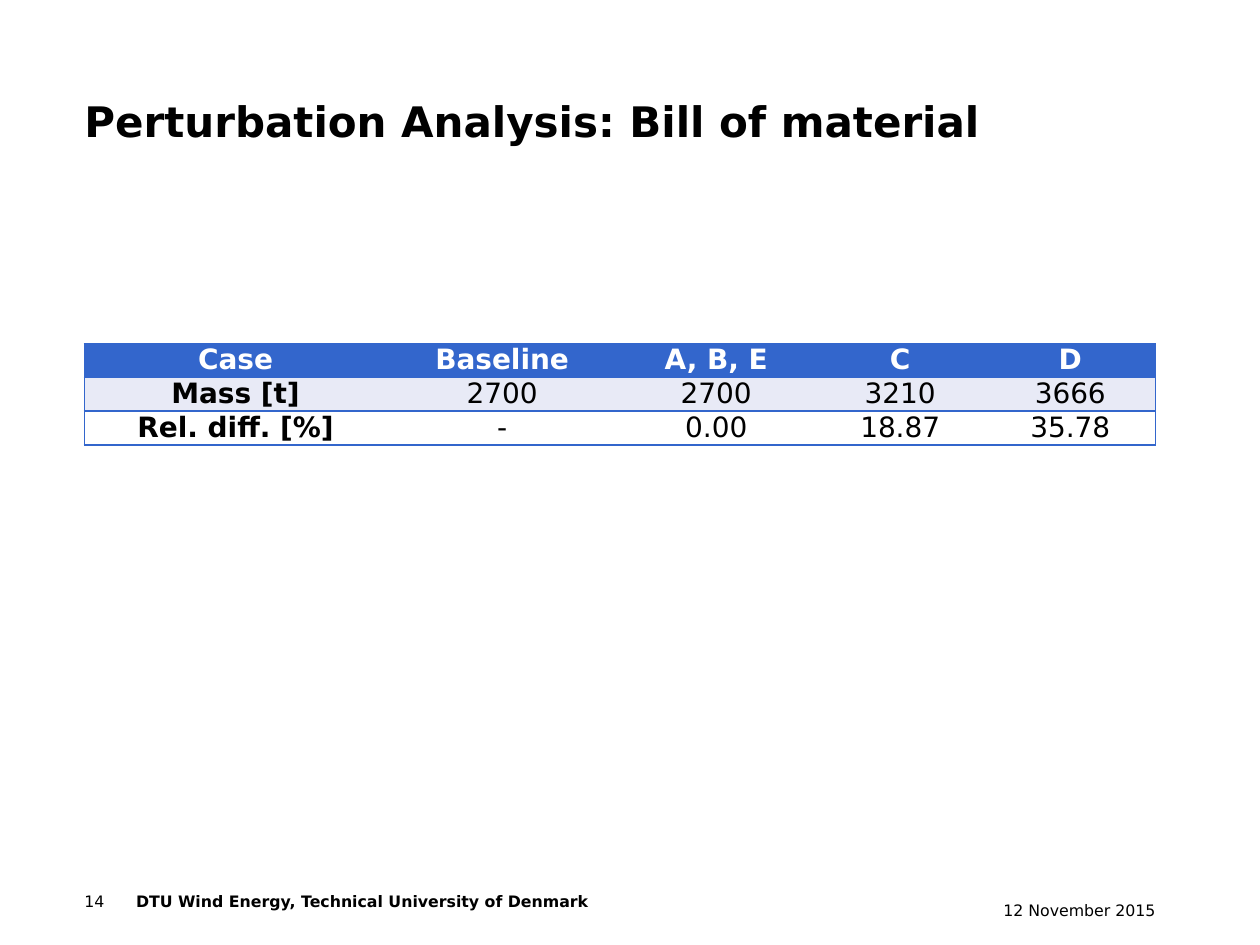
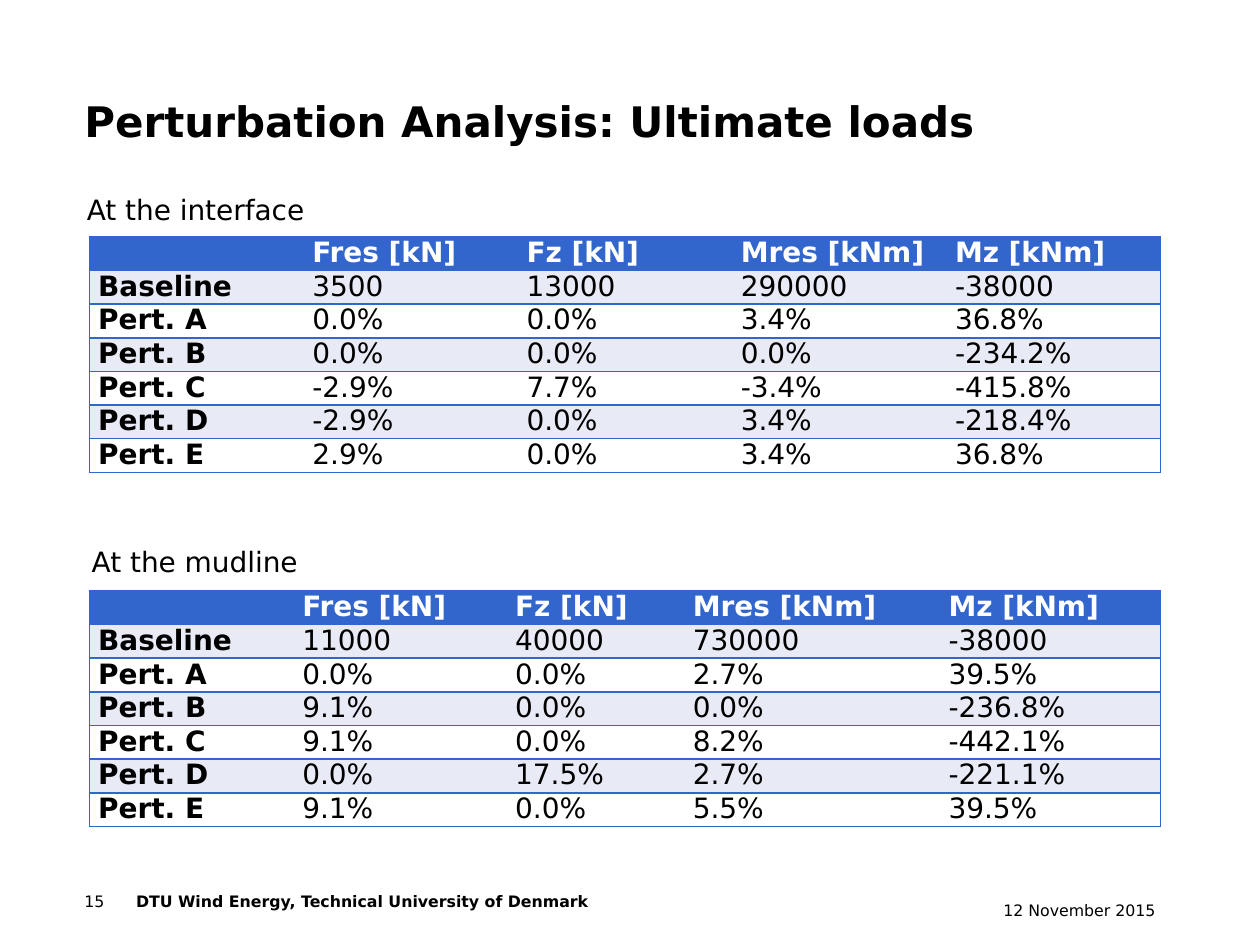
from lxml import etree
from pptx import Presentation
from pptx.dml.color import RGBColor
from pptx.enum.text import MSO_ANCHOR, PP_ALIGN
from pptx.oxml.ns import qn
from pptx.util import Inches, Pt

LEFT, CENTER, RIGHT = PP_ALIGN.LEFT, PP_ALIGN.CENTER, PP_ALIGN.RIGHT
TOP, MIDDLE = MSO_ANCHOR.TOP, MSO_ANCHOR.MIDDLE

FONT = "DejaVu Sans"
BLUE, PALE, WHITE, BLACK = "3366CC", "E8EAF6", "FFFFFF", "000000"
NO_STYLE = "{2D5ABB26-0587-4C30-8999-92F81FD0307C}"
MARGIN, CONTENT_WIDTH = 0.67, 8.5
TITLE_ONLY = 5

FOOTER = "DTU Wind Energy, Technical University of Denmark"
DATE = "12 November 2015"

MATERIAL = [
    ["Case", "Baseline", "A, B, E", "C", "D"],
    ["Mass [t]", "2700", "2700", "3210", "3666"],
    ["Rel. diff. [%]", "-", "0.00", "18.87", "35.78"],
]
LOAD_HEADER = ["", "Fres [kN]", "Fz [kN]", "Mres [kNm]", "Mz [kNm]"]
INTERFACE_LOADS = [
    LOAD_HEADER,
    ["Baseline", "3500", "13000", "290000", "-38000"],
    ["Pert. A", "0.0%", "0.0%", "3.4%", "36.8%"],
    ["Pert. B", "0.0%", "0.0%", "0.0%", "-234.2%"],
    ["Pert. C", "-2.9%", "7.7%", "-3.4%", "-415.8%"],
    ["Pert. D", "-2.9%", "0.0%", "3.4%", "-218.4%"],
    ["Pert. E", "2.9%", "0.0%", "3.4%", "36.8%"],
]
MUDLINE_LOADS = [
    LOAD_HEADER,
    ["Baseline", "11000", "40000", "730000", "-38000"],
    ["Pert. A", "0.0%", "0.0%", "2.7%", "39.5%"],
    ["Pert. B", "9.1%", "0.0%", "0.0%", "-236.8%"],
    ["Pert. C", "9.1%", "0.0%", "8.2%", "-442.1%"],
    ["Pert. D", "0.0%", "17.5%", "2.7%", "-221.1%"],
    ["Pert. E", "9.1%", "0.0%", "5.5%", "39.5%"],
]


def color(value):
    return RGBColor.from_string(value)


def write(frame, text, size=16, bold=False, ink=BLACK, align=LEFT):
    para = frame.paragraphs[0]
    para.alignment = align
    if not text:
        # The end mark keeps an empty line as tall as its neighbours.
        etree.SubElement(para._p, qn("a:endParaRPr"), sz=str(size * 100))
        return
    span = para.add_run()
    span.text = text
    span.font.name = FONT
    span.font.size = Pt(size)
    span.font.bold = bold
    span.font.color.rgb = color(ink)


def set_insets(frame, x=0, y=0):
    frame.margin_left = frame.margin_right = Inches(x)
    frame.margin_top = frame.margin_bottom = Inches(y)


def add_text(page, text, left, top, width, height, inset=(0, 0), **style):
    box = page.shapes.add_textbox(*map(Inches, (left, top, width, height)))
    frame = box.text_frame
    frame.word_wrap = True
    set_insets(frame, *inset)
    write(frame, text, **style)


def add_edge(cell, side):
    props = cell._tc.get_or_add_tcPr()
    line = etree.SubElement(props, qn(f"a:ln{side}"), w=str(Pt(1)))
    fill = etree.SubElement(line, qn("a:solidFill"))
    etree.SubElement(fill, qn("a:srgbClr"), val=BLUE)


def add_data_table(page, rows, left, top, height, widths, align=LEFT):
    """Draw a blue header row, striped body rows and bold row names."""
    last_column = len(widths) - 1
    frame = page.shapes.add_table(len(rows), len(widths), Inches(left), Inches(top),
                                  Inches(sum(widths)), Inches(height))
    table = frame.table
    table._tbl.tblPr.find(qn("a:tableStyleId")).text = NO_STYLE
    for column, width in zip(table.columns, widths):
        column.width = Inches(width)
    for r, row in enumerate(rows):
        for c, text in enumerate(row):
            cell = table.cell(r, c)
            set_insets(cell, x=0.07)
            cell.vertical_anchor = TOP
            edges = ("L" if c == 0 else "") + ("R" if c == last_column else "") + "TB"
            for side in edges:
                add_edge(cell, side)
            cell.fill.solid()
            cell.fill.fore_color.rgb = color(BLUE if r == 0 else PALE if r % 2 else WHITE)
            write(cell.text_frame, text, bold=r == 0 or c == 0,
                  ink=WHITE if r == 0 else BLACK, align=align)


def add_page(deck, title, number):
    """Add a page with its title, page number, footer and date."""
    page = deck.slides.add_slide(deck.slide_layouts[TITLE_ONLY])
    box = page.shapes.title
    box.left, box.top = Inches(MARGIN), Inches(0.33)
    box.width, box.height = Inches(CONTENT_WIDTH), Inches(1.25)
    set_insets(box.text_frame)
    box.text_frame.vertical_anchor = MIDDLE
    write(box.text_frame, title, size=24, bold=True)
    add_text(page, str(number), MARGIN, 7.08, 0.33, 0.33, size=9)
    add_text(page, FOOTER, 1.08, 7.08, 4.63, 0.33, size=9, bold=True)
    add_text(page, DATE, 7.76, 7.15, 1.41, 0.26, size=9, align=RIGHT)
    return page


def add_material_page(deck):
    page = add_page(deck, "Perturbation Analysis: Bill of material", 14)
    add_data_table(page, MATERIAL, MARGIN, 2.73, 0.77,
                   [2.4, 1.83, 1.57, 1.35, 1.35], align=CENTER)


def add_loads_page(deck):
    page = add_page(deck, "Perturbation Analysis: Ultimate loads", 15)
    add_text(page, "At the interface", 0.59, 1.48, 2.28, 0.37, inset=(0.1, 0.05))
    add_data_table(page, INTERFACE_LOADS, 0.71, 1.88, 1.8, [1.7] * 5)
    add_text(page, "At the mudline", 0.63, 4.27, 2.77, 0.37, inset=(0.1, 0.05))
    add_data_table(page, MUDLINE_LOADS, 0.71, 4.69, 1.87, [1.62, 1.69, 1.41, 2.03, 1.75])


def main():
    deck = Presentation()
    deck.slide_width, deck.slide_height = Inches(10), Inches(7.5)
    add_material_page(deck)
    add_loads_page(deck)
    deck.save("out.pptx")


if __name__ == "__main__":
    main()
